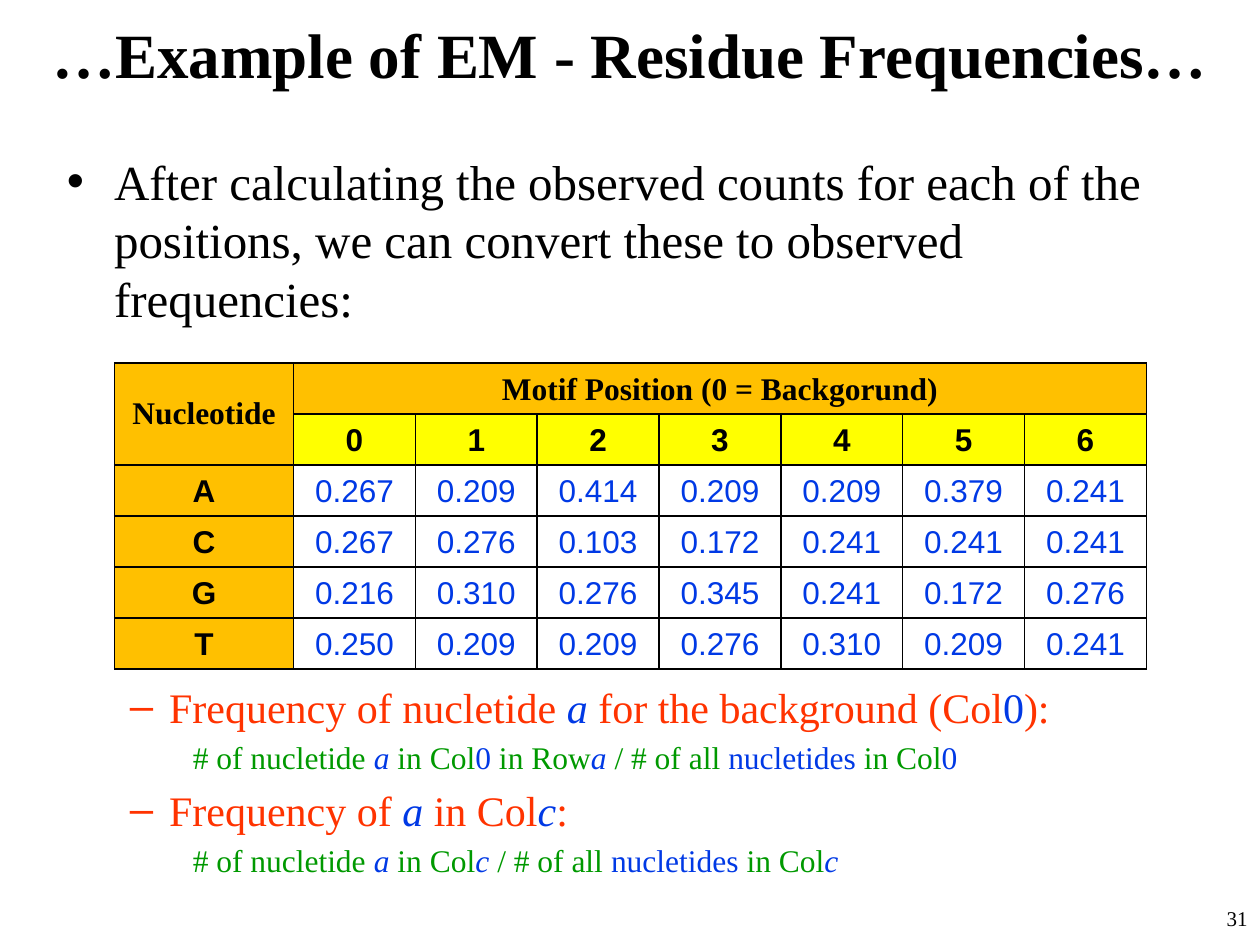
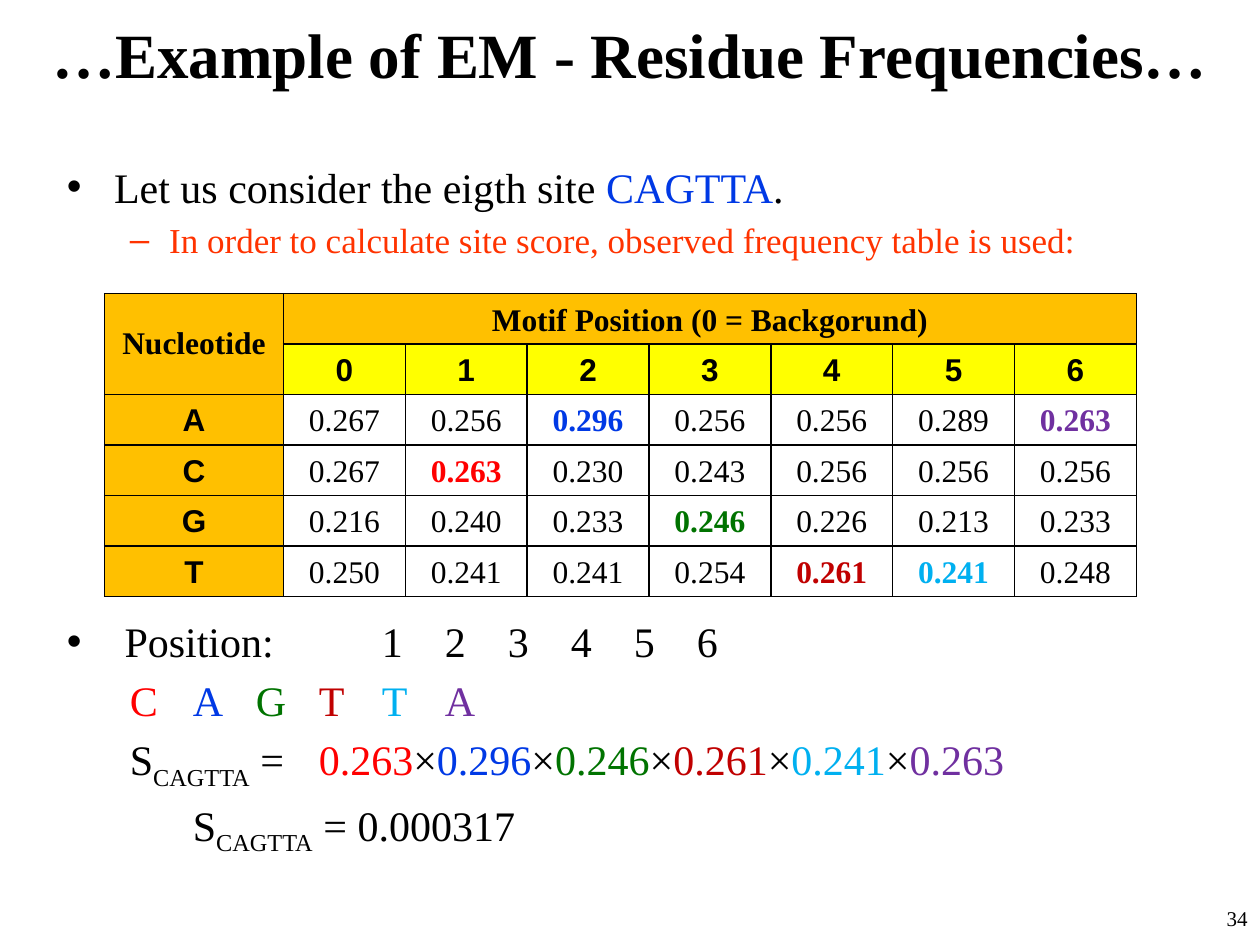
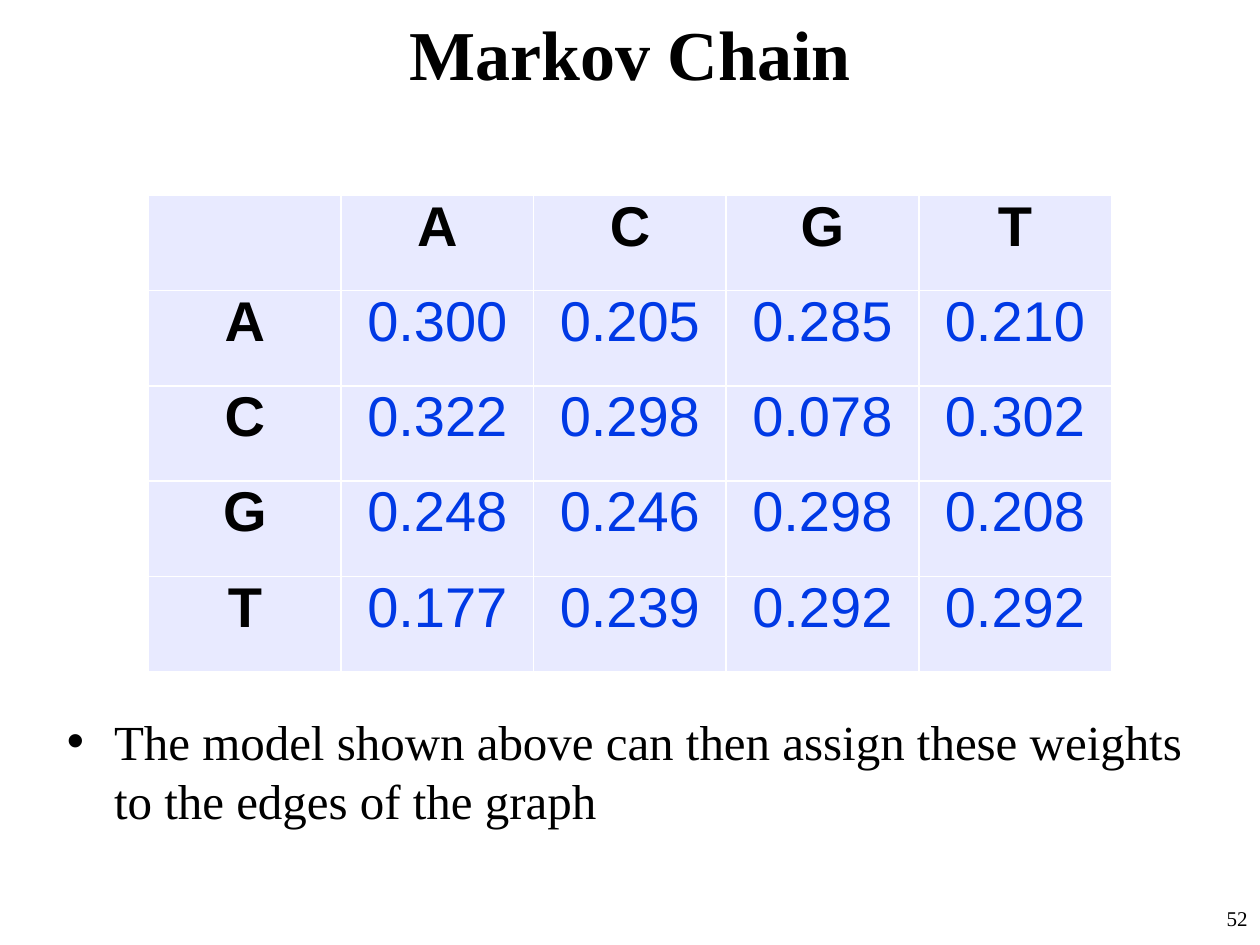
from dataclasses import dataclass

from lxml import etree
from pptx import Presentation
from pptx.dml.color import RGBColor
from pptx.enum.text import MSO_ANCHOR, MSO_AUTO_SIZE, PP_ALIGN
from pptx.oxml.ns import qn
from pptx.util import Emu, Inches, Pt

ANCHOR_TOP, ANCHOR_MIDDLE, ANCHOR_BOTTOM = MSO_ANCHOR.TOP, MSO_ANCHOR.MIDDLE, MSO_ANCHOR.BOTTOM
CENTER, RIGHT = PP_ALIGN.CENTER, PP_ALIGN.RIGHT
FIXED_SIZE = MSO_AUTO_SIZE.NONE

SLIDE_WIDTH, SLIDE_HEIGHT = Inches(10), Inches(7.5)
SERIF, SANS = "Times New Roman", "Arial"
BLACK, WHITE, BLUE, ORANGE, GREEN = "000000", "FFFFFF", "0039E5", "FF3300", "009900"
AMBER, YELLOW, LAVENDER = "FFC000", "FFFF00", "E8EAFF"

NUCLEOTIDES = "ACGT"
SITE = "CAGTTA"
SITE_COLORS = ("FF0000", BLUE, "007300", "C00000", "00B0F0", "7030A0")
EM_TITLE = "…Example of EM - Residue Frequencies…"

OBSERVED = (
    ("0.267", "0.209", "0.414", "0.209", "0.209", "0.379", "0.241"),
    ("0.267", "0.276", "0.103", "0.172", "0.241", "0.241", "0.241"),
    ("0.216", "0.310", "0.276", "0.345", "0.241", "0.172", "0.276"),
    ("0.250", "0.209", "0.209", "0.276", "0.310", "0.209", "0.241"),
)
SMOOTHED = (
    ("0.267", "0.256", "0.296", "0.256", "0.256", "0.289", "0.263"),
    ("0.267", "0.263", "0.230", "0.243", "0.256", "0.256", "0.256"),
    ("0.216", "0.240", "0.233", "0.246", "0.226", "0.213", "0.233"),
    ("0.250", "0.241", "0.241", "0.254", "0.261", "0.241", "0.248"),
)
TRANSITIONS = (
    ("0.300", "0.205", "0.285", "0.210"),
    ("0.322", "0.298", "0.078", "0.302"),
    ("0.248", "0.246", "0.298", "0.208"),
    ("0.177", "0.239", "0.292", "0.292"),
)


@dataclass(frozen=True)
class Box:
    """Percentages of the slide's width and height."""
    left: float
    top: float
    width: float
    height: float

    def place(self) -> tuple:
        return (across(self.left), down(self.top), across(self.width), down(self.height))


@dataclass(frozen=True)
class Run:
    text: str
    color: str | None = None
    italic: bool = False
    baseline: int = 0


@dataclass(frozen=True)
class Line:
    runs: tuple
    size: float
    color: str = BLACK
    level: int = 0
    gap: float | None = None
    margin: float | None = None
    tabs: tuple = ()


@dataclass(frozen=True)
class CellStyle:
    size: float
    font: str = SANS
    color: str = BLACK
    bold: bool = True
    fill: str | None = None
    border: str = BLACK
    anchor: MSO_ANCHOR = ANCHOR_BOTTOM
    margins: tuple = (0.1, 0.05)


TITLE_BOX = Box(0, 0, 100, 11.2)
NUMBER_BOX = Box(79.2, 95.2, 20.8, 4.8)


def across(percent: float) -> Emu:
    return Emu(round(SLIDE_WIDTH * percent / 100))


def down(percent: float) -> Emu:
    return Emu(round(SLIDE_HEIGHT * percent / 100))


def rgb(color: str) -> RGBColor:
    return RGBColor.from_string(color)


def add_text(paragraph, text: str, *, size: float, color: str = BLACK, font: str = SERIF,
             bold: bool = False, italic: bool = False, baseline: int = 0) -> None:
    run = paragraph.add_run()
    run.text = text
    run.font.name = font
    run.font.size = Pt(size)
    run.font.bold = bold
    run.font.italic = italic
    run.font.color.rgb = rgb(color)
    if baseline:
        run._r.get_or_add_rPr().set("baseline", str(baseline * 1000))


def remove_bullet(paragraph, margin: float, tabs: tuple) -> None:
    properties = paragraph._p.get_or_add_pPr()
    properties.set("marL", str(Inches(margin)))
    properties.set("indent", "0")
    etree.SubElement(properties, qn("a:buNone"))
    if tabs:
        tab_list = etree.SubElement(properties, qn("a:tabLst"))
        for position in tabs:
            etree.SubElement(tab_list, qn("a:tab"), pos=str(Inches(position)), algn="l")


def add_slide(presentation, title: str, number: int, title_size: float = 36):
    slide = presentation.slides.add_slide(presentation.slide_layouts[1])
    shape = slide.shapes.title
    shape.left, shape.top, shape.width, shape.height = TITLE_BOX.place()
    shape.text_frame.auto_size = FIXED_SIZE
    shape.text_frame.vertical_anchor = ANCHOR_MIDDLE
    paragraph = shape.text_frame.paragraphs[0]
    paragraph.alignment = CENTER
    add_text(paragraph, title, size=title_size, bold=True)

    number_frame = slide.shapes.add_textbox(*NUMBER_BOX.place()).text_frame
    number_frame.word_wrap = True
    number_frame.paragraphs[0].alignment = RIGHT
    add_text(number_frame.paragraphs[0], str(number), size=12)
    return slide


def fill_body(slide, box: Box, lines: tuple):
    body = slide.placeholders[1]
    body.left, body.top, body.width, body.height = box.place()
    frame = body.text_frame
    frame.auto_size = FIXED_SIZE
    for index, line in enumerate(lines):
        paragraph = frame.add_paragraph() if index else frame.paragraphs[0]
        paragraph.level = line.level
        if line.gap is not None:
            paragraph.space_before = Pt(line.gap)
        if line.margin is not None:
            remove_bullet(paragraph, line.margin, line.tabs)
        for run in line.runs:
            add_text(paragraph, run.text, size=line.size, color=run.color or line.color,
                     italic=run.italic, baseline=run.baseline)
    return body


def add_grid(slide, left: float, top: float, widths: tuple, row_height: float, row_count: int):
    box = Box(left, top, sum(widths), row_height * row_count)
    table = slide.shapes.add_table(row_count, len(widths), *box.place()).table
    table.first_row = table.horz_banding = False
    for column, width in zip(table.columns, widths):
        column.width = across(width)
    for row in table.rows:
        row.height = down(row_height)
    return table


def write_cell(cell, text: str, style: CellStyle) -> None:
    properties = cell._tc.get_or_add_tcPr()
    for side in ("lnL", "lnR", "lnT", "lnB"):
        border = etree.SubElement(properties, qn(f"a:{side}"), w=str(Pt(1)))
        solid = etree.SubElement(border, qn("a:solidFill"))
        etree.SubElement(solid, qn("a:srgbClr"), val=style.border)
    if style.fill:
        cell.fill.solid()
        cell.fill.fore_color.rgb = rgb(style.fill)
    else:
        cell.fill.background()
    cell.vertical_anchor = style.anchor
    cell.margin_left = cell.margin_right = Inches(style.margins[0])
    cell.margin_top = cell.margin_bottom = Inches(style.margins[1])
    paragraph = cell.text_frame.paragraphs[0]
    paragraph.alignment = CENTER
    if text:
        add_text(paragraph, text, size=style.size, font=style.font, color=style.color,
                 bold=style.bold)


def add_motif_table(slide, left: float, top: float, row_height: float, values: tuple,
                    value_style: CellStyle, highlights: dict) -> None:
    position_count = len(values[0])
    table = add_grid(slide, left, top, (14.2,) + (9.67,) * position_count, row_height,
                     len(values) + 2)
    corner = CellStyle(18, font=SERIF, fill=AMBER, anchor=ANCHOR_MIDDLE)
    heading = CellStyle(18, font=SERIF, fill=AMBER)
    position_style = CellStyle(18, fill=YELLOW)
    row_style = CellStyle(18, fill=AMBER)

    write_cell(table.cell(0, 0), "Nucleotide", corner)
    write_cell(table.cell(1, 0), "", corner)
    for position in range(position_count):
        text = "" if position else "Motif Position (0 = Backgorund)"
        write_cell(table.cell(0, position + 1), text, heading)
        write_cell(table.cell(1, position + 1), str(position), position_style)
    table.cell(0, 0).merge(table.cell(1, 0))
    table.cell(0, 1).merge(table.cell(0, position_count))

    for row, (nucleotide, frequencies) in enumerate(zip(NUCLEOTIDES, values)):
        write_cell(table.cell(row + 2, 0), nucleotide, row_style)
        for position, frequency in enumerate(frequencies):
            color = highlights.get((nucleotide, position))
            style = CellStyle(18, font=value_style.font, color=color) if color else value_style
            write_cell(table.cell(row + 2, position + 1), frequency, style)


def variable(text: str) -> Run:
    return Run(text, BLUE, italic=True)


def build_observed_slide(presentation) -> None:
    slide = add_slide(presentation, EM_TITLE, 31)
    fill_body(slide, Box(4.3, 15.33, 92.2, 79.33), (
        Line((Run("After calculating the observed counts for each of the positions, "
                  "we can convert these to observed frequencies:"),), 28),
        Line((Run("Frequency of nucletide "), variable("a"),
              Run(" for the background (Col"), Run("0", BLUE), Run("):")),
             24, ORANGE, level=1, gap=202),
        Line((Run("# of nucletide "), variable("a"), Run(" in Col"), Run("0", BLUE),
              Run(" in Row"), variable("a "), Run("/ # of all "), Run("nucletides ", BLUE),
              Run("in Col"), Run("0", BLUE)), 18, GREEN, level=2, margin=1),
        Line((Run("Frequency of "), variable("a"), Run(" in Col"), variable("c"), Run(":")),
             24, ORANGE, level=1),
        Line((Run("# of nucletide "), variable("a"), Run(" in Col"), variable("c "),
              Run("/ # of all "), Run("nucletides", BLUE), Run(" in Col"), variable("c")),
             18, GREEN, level=2, margin=1),
    ))
    add_motif_table(slide, 9.1, 38.4, 5.4, OBSERVED,
                    CellStyle(18, color=BLUE, bold=False), {})


def build_score_slide(presentation) -> None:
    slide = add_slide(presentation, EM_TITLE, 34)
    positions = range(1, len(SITE) + 1)
    letters = tuple(Run(f"\t{letter}", color) for letter, color in zip(SITE, SITE_COLORS))
    factors = []
    for position, letter, color in zip(positions, SITE, SITE_COLORS):
        if factors:
            factors.append(Run("×"))
        factors.append(Run(SMOOTHED[NUCLEOTIDES.index(letter)][position], color))
    subscript = Run(SITE, baseline=-25)

    body = fill_body(slide, Box(4.3, 16.4, 92.2, 78.27), (
        Line((Run("Let us consider the eigth site "), Run(SITE, BLUE), Run(".")), 24),
        Line((Run("In order to calculate site score, observed frequency table is used:"),),
             20, ORANGE, level=1),
        Line((Run(" Position:\t\t" + "\t".join(map(str, positions))),), 24, gap=203),
        Line(letters, 24, margin=0, tabs=tuple(position + 2 for position in positions)),
        Line((Run("\tS"), subscript, Run(" =\t"), *factors), 24, margin=0, tabs=(1, 2.82)),
        Line((Run("S"), subscript, Run(" = 0.000317")), 24, margin=1),
    ))
    body.fill.solid()
    body.fill.fore_color.rgb = rgb(WHITE)
    highlights = dict(zip(zip(SITE, positions), SITE_COLORS))
    add_motif_table(slide, 8.3, 31.07, 5.23, SMOOTHED,
                    CellStyle(18, font=SERIF, bold=False), highlights)


def build_markov_slide(presentation) -> None:
    slide = add_slide(presentation, "Markov Chain", 52, title_size=40)
    body = fill_body(slide, Box(4.3, 16.4, 90.6, 72.53), (
        Line((Run("The model shown above can then assign these weights "
                  "to the edges of the graph"),), 28),
    ))
    body.text_frame.vertical_anchor = ANCHOR_BOTTOM
    body.text_frame.margin_bottom = Inches(0.09)

    size = len(NUCLEOTIDES) + 1
    table = add_grid(slide, 11.8, 20.67, (15.28,) * size, 10.08, size)
    shared = dict(size=32, fill=LAVENDER, border=WHITE, anchor=ANCHOR_TOP, margins=(0.08, 0))
    heading = CellStyle(**shared)
    weight = CellStyle(color=BLUE, bold=False, **shared)
    rows = [("", *NUCLEOTIDES)]
    rows += [(letter, *weights) for letter, weights in zip(NUCLEOTIDES, TRANSITIONS)]
    for row, texts in enumerate(rows):
        for column, text in enumerate(texts):
            write_cell(table.cell(row, column), text, weight if row and column else heading)


def main() -> None:
    presentation = Presentation()
    presentation.slide_width, presentation.slide_height = SLIDE_WIDTH, SLIDE_HEIGHT
    build_observed_slide(presentation)
    build_score_slide(presentation)
    build_markov_slide(presentation)
    presentation.save("out.pptx")


if __name__ == "__main__":
    main()
